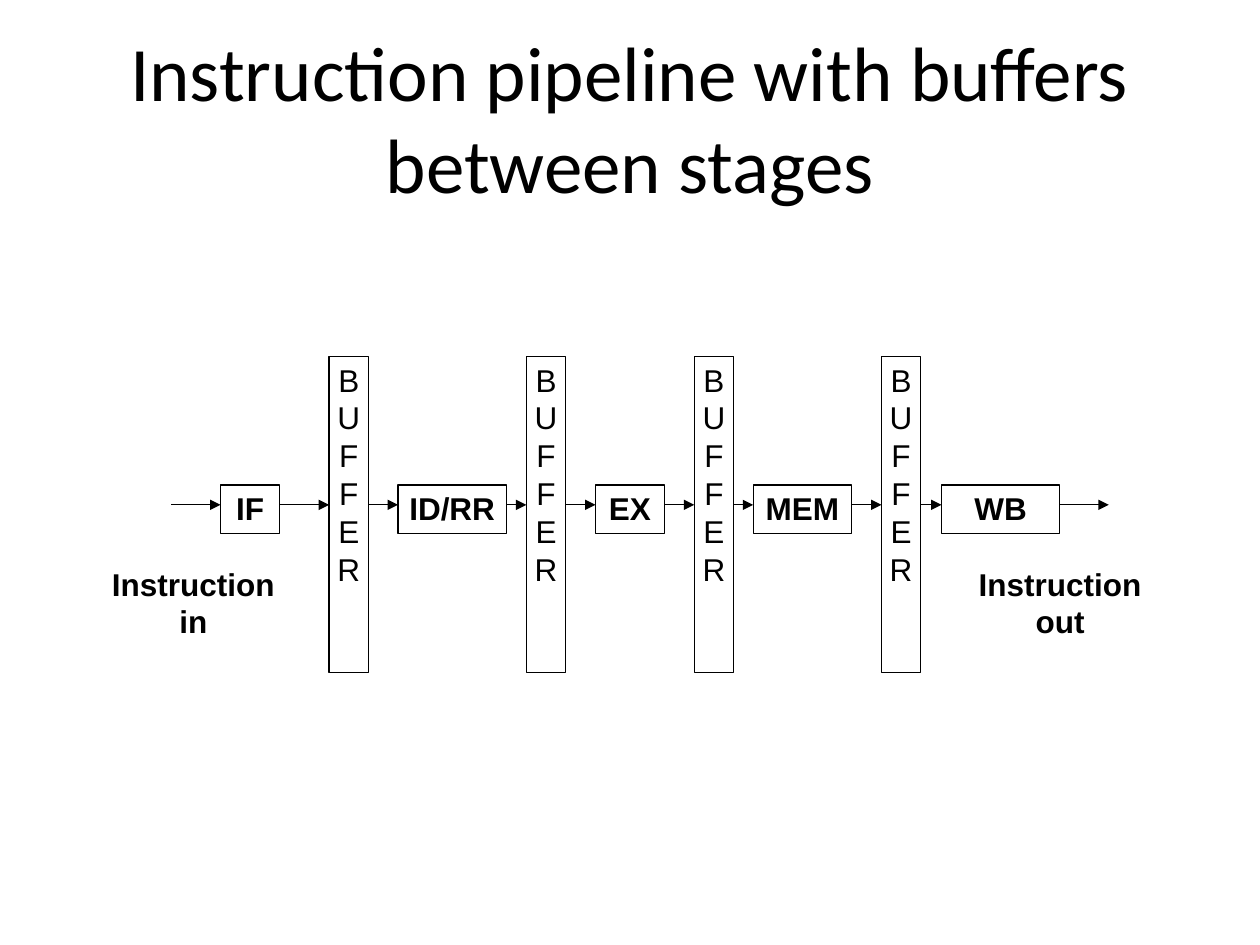
from lxml import etree
from pptx import Presentation
from pptx import util as u
from pptx.dml.color import RGBColor
from pptx.enum import shapes, text
from pptx.oxml import ns

BLACK = RGBColor(0, 0, 0)

TITLE = "Instruction pipeline with buffers between stages"
# Pipeline from left to right: label, left, width
BUFFER = "BUFFER"
BLOCKS = [
    ("IF", 126, 33.9),
    (BUFFER, 188.1, 22.5),
    ("ID/RR", 227.4, 62),
    (BUFFER, 300.8, 22.5),
    ("EX", 340.3, 39.4),
    (BUFFER, 396.7, 22.5),
    ("MEM", 430.4, 56.3),
    (BUFFER, 503.7, 22.5),
    ("WB", 538, 67.5),
]
# Captions: lines, left, width
CAPTIONS = [
    (["Instruction", "in"], 48.2, 124.6),
    (["Instruction", "out"], 537.8, 136),
]

STAGE_TOP, STAGE_HEIGHT = 277.2, 27.9
BUFFER_TOP, BUFFER_HEIGHT = 203.8, 180.6
CAPTION_TOP, CAPTION_HEIGHT = 320.4, 51.1
FLOW_Y, FLOW_START, FLOW_END = 288.5, 97.9, 633.6
LINE_WIDTH = 0.75


def write(shape, lines, size=18, font="Arial", bold=False, spacing=21.6,
          insets=(4.3, 2.2), anchor=text.MSO_ANCHOR.TOP):
    frame = shape.text_frame
    frame.word_wrap = True
    frame.vertical_anchor = anchor
    frame.margin_left = frame.margin_right = u.Pt(insets[0])
    frame.margin_top = frame.margin_bottom = u.Pt(insets[1])
    for index, line in enumerate(lines):
        paragraph = frame.add_paragraph() if index else frame.paragraphs[0]
        paragraph.alignment = text.PP_ALIGN.CENTER
        if spacing:
            paragraph.line_spacing = u.Pt(spacing)
        run = paragraph.add_run()
        run.text = line
        run.font.size = u.Pt(size)
        run.font.name = font
        run.font.bold = bold
        run.font.color.rgb = BLACK


def add_text(slide, box, lines, **style):
    write(slide.shapes.add_textbox(*map(u.Pt, box)), lines, **style)


def add_block(slide, box, lines, bold):
    shape = slide.shapes.add_shape(shapes.MSO_SHAPE.RECTANGLE, *map(u.Pt, box))
    shape.shadow.inherit = False
    shape.fill.background()
    shape.line.color.rgb = BLACK
    shape.line.width = u.Pt(LINE_WIDTH)
    write(shape, lines, bold=bold)


def add_arrow(slide, start, end):
    arrow = slide.shapes.add_connector(
        shapes.MSO_CONNECTOR.STRAIGHT,
        u.Pt(start), u.Pt(FLOW_Y), u.Pt(end), u.Pt(FLOW_Y))
    arrow.line.color.rgb = BLACK
    arrow.line.width = u.Pt(LINE_WIDTH)
    line = arrow.line._get_or_add_ln()
    etree.SubElement(line, ns.qn("a:tailEnd"), type="triangle")
    etree.SubElement(arrow._element.spPr, ns.qn("a:effectLst"))


def main():
    presentation = Presentation()
    presentation.slide_width, presentation.slide_height = u.Pt(720), u.Pt(540)
    slide = presentation.slides.add_slide(presentation.slide_layouts[6])

    # Title
    add_text(slide, (36, 21.6, 648, 90), [TITLE], size=44, font="Calibri",
             spacing=None, insets=(7.2, 3.6), anchor=text.MSO_ANCHOR.MIDDLE)

    # Stages and the buffers between them
    for label, left, width in BLOCKS:
        if label == BUFFER:
            add_block(slide, (left, BUFFER_TOP, width, BUFFER_HEIGHT),
                      list(label), bold=False)
        else:
            add_block(slide, (left, STAGE_TOP, width, STAGE_HEIGHT),
                      [label], bold=True)

    # Arrows fill every gap along the flow
    starts = [FLOW_START] + [left + width for _, left, width in BLOCKS]
    ends = [left for _, left, _ in BLOCKS] + [FLOW_END]
    for start, end in zip(starts, ends):
        add_arrow(slide, start, end)

    # Captions at both ends
    for lines, left, width in CAPTIONS:
        add_text(slide, (left, CAPTION_TOP, width, CAPTION_HEIGHT), lines,
                 bold=True)

    presentation.save("out.pptx")


if __name__ == "__main__":
    main()
